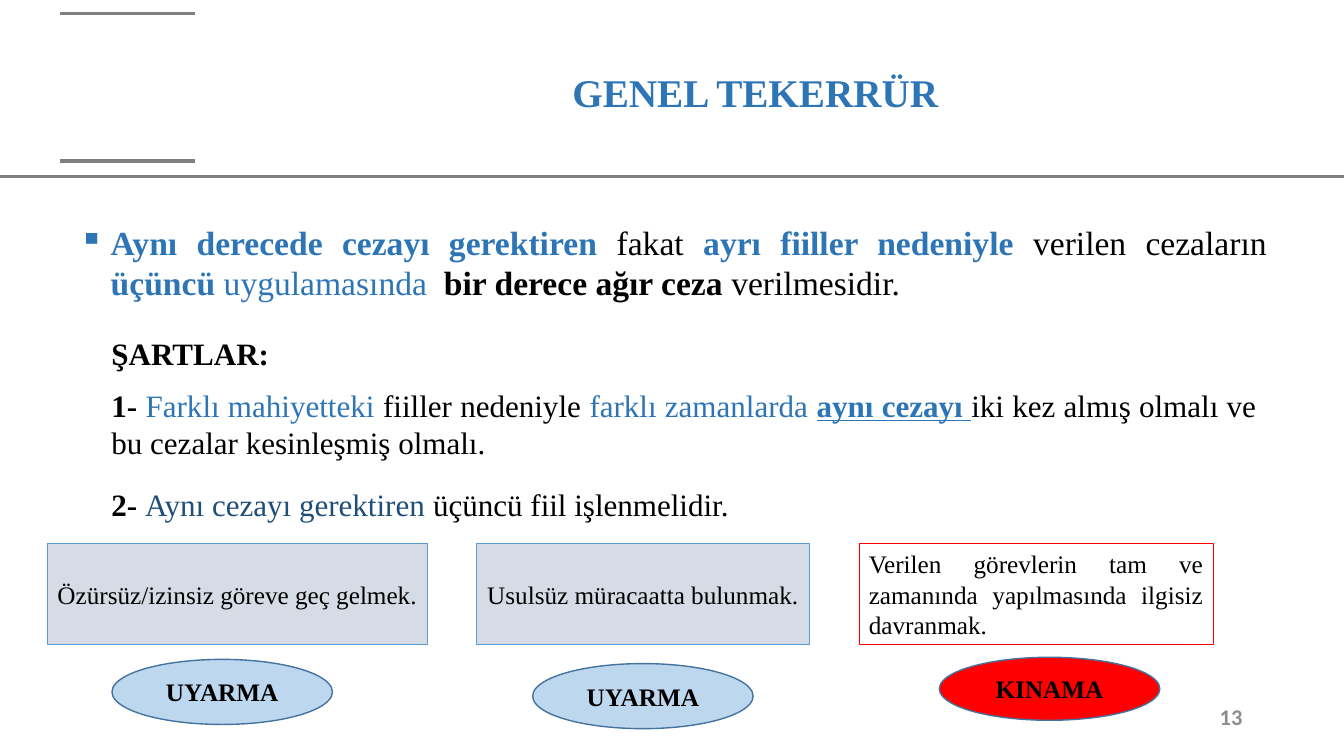
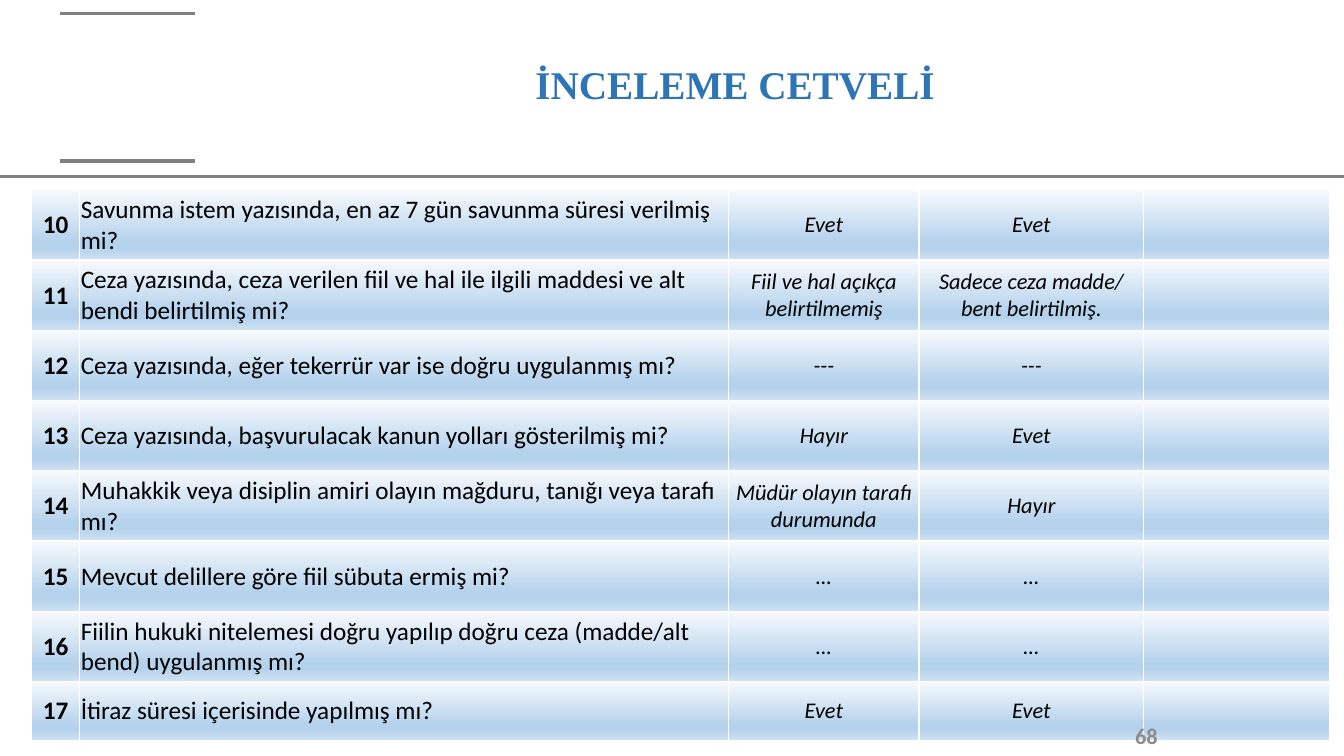
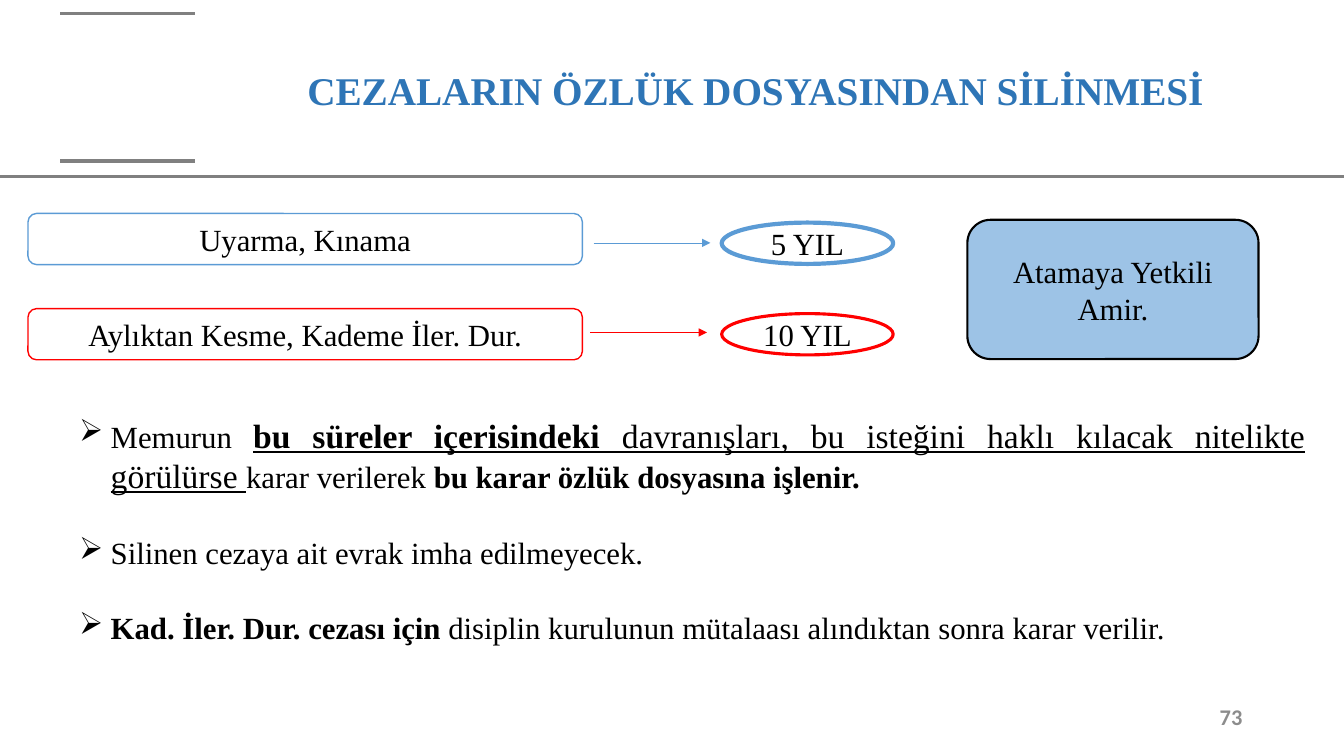
from lxml import etree
from pptx import Presentation
from pptx.dml.color import RGBColor
from pptx.enum.shapes import MSO_CONNECTOR, MSO_SHAPE
from pptx.enum.text import MSO_ANCHOR, PP_ALIGN
from pptx.oxml.ns import qn
from pptx.util import Pt

BLACK = RGBColor(0x00, 0x00, 0x00)
WHITE = RGBColor(0xFF, 0xFF, 0xFF)
RED = RGBColor(0xFF, 0x00, 0x00)
RULE = RGBColor(0x80, 0x80, 0x80)
PAGE = RGBColor(0x8C, 0x8C, 0x8C)
BLUE = RGBColor(0x2E, 0x75, 0xB6)
NAVY = RGBColor(0x1F, 0x4E, 0x79)
SKY = RGBColor(0x5B, 0x9B, 0xD5)
STEEL = RGBColor(0x43, 0x73, 0x9E)
PALE = RGBColor(0xBD, 0xD7, 0xEE)
MIST = RGBColor(0xD6, 0xDC, 0xE5)
SOFT = RGBColor(0x9D, 0xC3, 0xE6)
CELL_STOPS = [
    (0, RGBColor(0xF7, 0xFA, 0xFD)),
    (74, RGBColor(0xB5, 0xD2, 0xEC)),
    (83, RGBColor(0xB5, 0xD2, 0xEC)),
    (100, RGBColor(0xCE, 0xE1, 0xF2)),
]

SERIF, SANS = "Times New Roman", "Calibri"
LEFT, CENTER = PP_ALIGN.LEFT, PP_ALIGN.CENTER
RIGHT, JUSTIFY = PP_ALIGN.RIGHT, PP_ALIGN.JUSTIFY
TOP, MIDDLE = MSO_ANCHOR.TOP, MSO_ANCHOR.MIDDLE
RECT, ROUND, OVAL = MSO_SHAPE.RECTANGLE, MSO_SHAPE.ROUNDED_RECTANGLE, MSO_SHAPE.OVAL
STRAIGHT = MSO_CONNECTOR.STRAIGHT
WIDTH, HEIGHT = 960, 540


class Deck:
    """Holds the shared style and the current slide; lengths are in points."""

    def __init__(self):
        self.prs = Presentation()
        self.prs.slide_width, self.prs.slide_height = Pt(WIDTH), Pt(HEIGHT)
        self.s = None

    def slide(self, title, left=185, top=30):
        self.s = self.prs.slides.add_slide(self.prs.slide_layouts[6])
        for x1, x2, y in ((0, WIDTH, 126), (43, 139, 9.5), (43, 139, 115)):
            self.line(x1, x2, y, RULE, 2.25)
        tf = self.box(left, top, 709, 76, MIDDLE)
        self.para(tf, [(title, BLUE, "b")], 28, CENTER, spacing=0.9)

    def page(self, number, left=839, top=497):
        tf = self.box(left, top, 55.5, 29, MIDDLE)
        self.para(tf, [(number, PAGE, "b")], 16, RIGHT, font=SANS)

    def line(self, x1, x2, y, color, weight, arrow=False):
        c = self.s.shapes.add_connector(STRAIGHT, Pt(x1), Pt(y), Pt(x2), Pt(y))
        c.line.color.rgb = color
        c.line.width = Pt(weight)
        if arrow:
            etree.SubElement(c.line._get_or_add_ln(), qn("a:tailEnd"), type="triangle")
        etree.SubElement(c._element.spPr, qn("a:effectLst"))

    def box(self, left, top, width, height, anchor=TOP):
        tf = self.s.shapes.add_textbox(Pt(left), Pt(top), Pt(width), Pt(height)).text_frame
        tf.word_wrap = True
        tf.vertical_anchor = anchor
        return tf

    def shape(self, kind, at, text, fill, line, weight, size=18, align=CENTER, style=""):
        sp = self.s.shapes.add_shape(kind, *map(Pt, at))
        sp.shadow.inherit = False
        sp.fill.solid()
        sp.fill.fore_color.rgb = fill
        sp.line.color.rgb = line
        sp.line.width = Pt(weight)
        sp.text_frame.word_wrap = True
        sp.text_frame.vertical_anchor = MIDDLE
        self.para(sp.text_frame, [(text, BLACK, style)], size, align)

    def para(self, tf, runs, size, align=LEFT, font=SERIF, spacing=None, before=0, bullet=None):
        p = tf.paragraphs[0]
        if p.runs:
            p = tf.add_paragraph()
            p.space_before = Pt(before)
        p.alignment = align
        if spacing:
            p.line_spacing = spacing
        if bullet:
            pPr = p._p.get_or_add_pPr()
            pPr.set("marL", str(Pt(22.5)))
            pPr.set("indent", str(-Pt(22.5)))
            etree.SubElement(pPr, qn("a:buChar"), char=bullet)
        for text, color, style, *own_size in runs:
            r = p.add_run()
            r.text = text
            r.font.name = font
            r.font.size = Pt(own_size[0] if own_size else size)
            r.font.color.rgb = color
            r.font.bold = "b" in style
            r.font.italic = "i" in style
            r.font.underline = "u" in style

    def table(self, left, top, widths, heights, rows, formats):
        frame = self.s.shapes.add_table(len(heights), len(widths), Pt(left), Pt(top),
                                        Pt(sum(widths)), Pt(sum(heights)))
        table = frame.table
        table.first_row = table.horz_banding = False
        for column, width in zip(table.columns, widths):
            column.width = Pt(width)
        for row, height, texts in zip(table.rows, heights, rows):
            row.height = Pt(height)
            for cell, text, (size, align, style) in zip(row.cells, texts, formats):
                self.para(cell.text_frame, [(text, BLACK, style)], size, align, SANS)
            for cell in row.cells:
                self.cell_style(cell)

    def cell_style(self, cell):
        cell.vertical_anchor = MIDDLE
        cell.margin_left = cell.margin_right = cell.margin_top = Pt(0.72)
        cell.margin_bottom = 0
        tcPr = cell._tc.get_or_add_tcPr()
        for side in ("lnL", "lnR", "lnT", "lnB"):
            ln = etree.SubElement(tcPr, qn(f"a:{side}"), w=str(Pt(1)))
            solid = etree.SubElement(ln, qn("a:solidFill"))
            etree.SubElement(solid, qn("a:srgbClr"), val=str(WHITE))
        grad = etree.SubElement(tcPr, qn("a:gradFill"))
        stops = etree.SubElement(grad, qn("a:gsLst"))
        for pos, color in CELL_STOPS:
            gs = etree.SubElement(stops, qn("a:gs"), pos=str(pos * 1000))
            etree.SubElement(gs, qn("a:srgbClr"), val=str(color))
        etree.SubElement(grad, qn("a:lin"), ang="5400000", scaled="0")


def recurrence(deck):
    deck.slide("GENEL TEKERRÜR")
    tf = deck.box(49.5, 155, 862.5, 94)
    deck.para(tf, [
        ("Aynı derecede cezayı gerektiren ", BLUE, "b"),
        ("fakat ", BLACK, ""),
        ("ayrı fiiller nedeniyle ", BLUE, "b"),
        ("verilen cezaların ", BLACK, ""),
        ("üçüncü ", BLUE, "b"),
        ("uygulamasında  ", BLUE, ""),
        ("bir derece ağır ceza ", BLACK, "b"),
        ("verilmesidir.", BLACK, ""),
    ], 24, JUSTIFY, bullet="▪")

    tf = deck.box(72.5, 227.5, 832, 150)
    deck.para(tf, [("ŞARTLAR:", BLACK, "b")], 22.2, spacing=1.3)
    deck.para(tf, [
        ("1- ", BLACK, "b"),
        ("Farklı mahiyetteki ", BLUE, ""),
        ("fiiller nedeniyle ", BLACK, ""),
        ("farklı zamanlarda ", BLUE, ""),
        ("aynı cezayı ", BLUE, "bu"),
        ("iki kez almış olmalı ve bu cezalar kesinleşmiş olmalı.", BLACK, ""),
    ], 22.2, JUSTIFY, before=10)
    deck.para(tf, [
        ("2- ", BLACK, "b"),
        ("Aynı cezayı gerektiren ", NAVY, ""),
        ("üçüncü fiil işlenmelidir.", BLACK, ""),
    ], 22.2, JUSTIFY, spacing=1.3, before=10)

    for left, width, text, fill, line, align in (
        (34, 271.5, "Özürsüz/izinsiz göreve geç gelmek.", MIST, SKY, LEFT),
        (340.5, 237.5, "Usulsüz müracaatta bulunmak.", MIST, SKY, CENTER),
        (613.5, 253, "Verilen görevlerin tam ve zamanında yapılmasında ilgisiz davranmak.",
         WHITE, RED, JUSTIFY),
    ):
        deck.shape(RECT, (left, 388, width, 72.5), text, fill, line, 0.5, align=align)
    for left, top, height, text, fill in (
        (80, 471, 46.5, "UYARMA", PALE),
        (380.5, 474, 46.5, "UYARMA", PALE),
        (671, 469.5, 45, "KINAMA", RED),
    ):
        deck.shape(OVAL, (left, top, 157.5, height), text, fill, STEEL, 1, style="b")
    deck.page("13")


def checklist(deck):
    deck.slide("İNCELEME CETVELİ", 170.5, 24)
    rows = [
        ("10", "Savunma istem yazısında, en az 7 gün savunma süresi verilmiş mi?", "Evet", "Evet"),
        ("11", "Ceza yazısında, ceza verilen fiil ve hal ile ilgili maddesi ve alt bendi belirtilmiş mi?",
         "Fiil ve hal açıkça belirtilmemiş", "Sadece ceza madde/ bent belirtilmiş."),
        ("12", "Ceza yazısında, eğer tekerrür var ise doğru uygulanmış mı?", "---", "---"),
        ("13", "Ceza yazısında, başvurulacak kanun yolları gösterilmiş mi?", "Hayır", "Evet"),
        ("14", "Muhakkik veya disiplin amiri olayın mağduru, tanığı veya tarafı mı?",
         "Müdür olayın tarafı durumunda", "Hayır"),
        ("15", "Mevcut delillere göre fiil sübuta ermiş mi?", "…", "…"),
        ("16", "Fiilin hukuki nitelemesi doğru yapılıp doğru ceza (madde/alt bend) uygulanmış mı?",
         "…", "…"),
        ("17", "İtiraz süresi içerisinde yapılmış mı?", "Evet", "Evet"),
    ]
    formats = [(18, CENTER, "b"), (18, LEFT, ""), (16, CENTER, "i"), (16, CENTER, "i")]
    deck.table(22.5, 135.5, (34.5, 463.5, 136, 160.5, 132.5), [50.2] * 7 + [42], rows, formats)
    deck.page("68", 778.5, 511)


def deletion(deck):
    deck.slide("CEZALARIN ÖZLÜK DOSYASINDAN SİLİNMESİ", top=28.5)
    for top, penalty, years, color, weight, arrow_left, arrow_y, oval_top in (
        (152.5, "Uyarma, Kınama", "5 YIL", SKY, 3, 424, 173.5, 159),
        (220.5, "Aylıktan Kesme, Kademe İler. Dur.", "10 YIL", RED, 2.25, 421.5, 237.5, 224),
    ):
        deck.shape(ROUND, (20, top, 396, 36.5), penalty, WHITE, color, 1, 22)
        deck.line(arrow_left, arrow_left + 83.5, arrow_y, color, 0.5, arrow=True)
        deck.shape(OVAL, (515.5, oval_top, 122.5, 29.5), years, WHITE, color, weight, 22)
    deck.shape(ROUND, (691, 157, 208, 99.5), "Atamaya Yetkili Amir.", SOFT, BLACK, 1.5, 22)

    tf = deck.box(49.5, 292.5, 890, 172)
    for runs in (
        [("Memurun ", BLACK, ""),
         ("bu süreler içerisindeki", BLACK, "bu", 24),
         (" davranışları, bu isteğini haklı kılacak nitelikte görülürse ", BLACK, "u", 24),
         ("karar verilerek ", BLACK, ""),
         ("bu karar özlük dosyasına işlenir.", BLACK, "b")],
        [("Silinen cezaya ait evrak imha edilmeyecek.", BLACK, "")],
        [("Kad. İler. Dur. cezası için ", BLACK, "b"),
         ("disiplin kurulunun mütalaası alındıktan sonra karar verilir.", BLACK, "")],
    ):
        deck.para(tf, runs, 22, JUSTIFY, before=27.5, bullet="➢")
    deck.page("73")


def main():
    deck = Deck()
    recurrence(deck)
    checklist(deck)
    deletion(deck)
    deck.prs.save("out.pptx")


if __name__ == "__main__":
    main()
